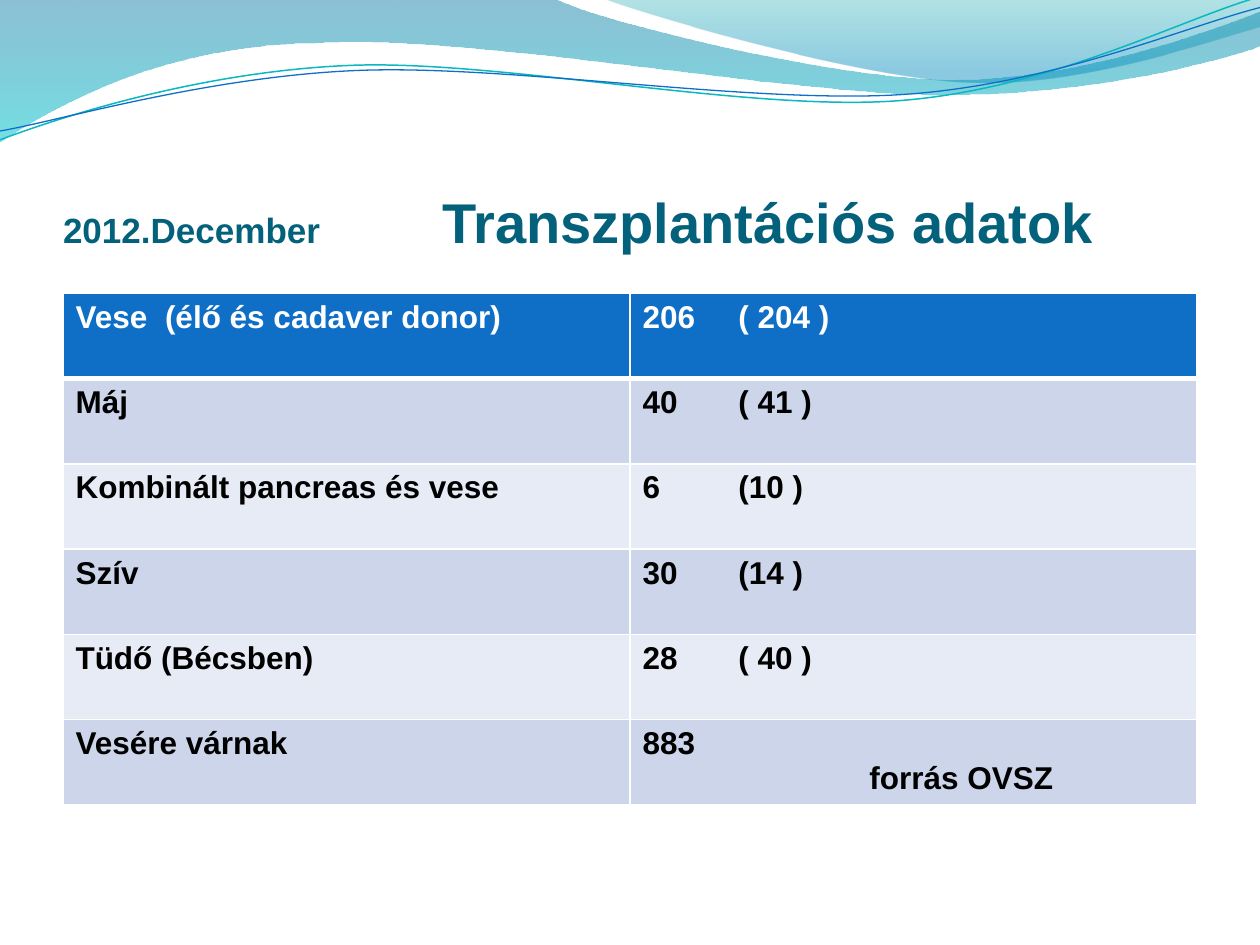
from lxml import etree
from pptx import Presentation
from pptx import util as u
from pptx.dml.color import RGBColor
from pptx.enum import text
from pptx.oxml import ns

TEAL = RGBColor(0x04, 0x61, 0x7B)
BLUE = RGBColor(0x0F, 0x6F, 0xC6)
AQUA = RGBColor(0x0A, 0xB8, 0xBF)
WHITE = RGBColor(0xFF, 0xFF, 0xFF)
BLACK = RGBColor(0, 0, 0)
DARK = RGBColor(0xCC, 0xD5, 0xEA)
LIGHT = RGBColor(0xE7, 0xEB, 0xF5)

# Each outline is a start point, then lines (2 numbers) or Bézier curves (6 numbers).
BANDS = [
    ([(0, -0.01), (4.4, -0.01), (4.76, 0.17, 6.64, 0.63, 7.58, 0.63),
      (8.53, 0.63, 9.58, 0.26, 10, 0.09), (10.01, 0.36),
      (9.83, 0.44, 8.7, 0.76, 7.46, 0.75), (6.22, 0.75, 3.82, 0.28, 2.57, 0.34),
      (1.29, 0.35, 0.46, 0.83, -0.01, 1.13), (0, -0.01)],
     [(0, RGBColor(0, 0x74, 0xA1), 45), (1, RGBColor(0, 0xC6, 0xCF), 55)]),
    ([(4.79, -0.01), (5.09, 0.11, 6.82, 0.62, 7.69, 0.65),
      (8.56, 0.69, 9.61, 0.32, 10, 0.21), (10, 0), (4.79, -0.01)],
     [(0, RGBColor(0, 0xA1, 0xA9), 30), (0.8, RGBColor(0, 0x8B, 0xBF), 45)]),
]
WAVES = [
    ([(0, 1.11), (0.48, 0.93, 1.58, 0.57, 2.77, 0.52),
      (3.95, 0.47, 5.93, 0.89, 7.13, 0.8), (8.33, 0.71, 9.38, 0.15, 9.98, -0.02)],
     AQUA, 0.85),
    ([(0, 1.04), (0.47, 0.96, 1.64, 0.61, 2.83, 0.56),
      (4.03, 0.51, 5.97, 0.83, 7.17, 0.75), (8.36, 0.67, 9.41, 0.21, 10, 0.06)],
     BLUE, 0.75),
]
ROWS = [
    ("Vese\t(élő és cadaver donor)", "206\t( 204 )"),
    ("Máj", "40\t( 41 )"),
    ("Kombinált pancreas és vese", "6\t(10 )"),
    ("Szív", "30\t(14 )"),
    ("Tüdő (Bécsben)", "28\t( 40 )"),
    ("Vesére várnak", "883"),
]
TABS = (0.71, 0.76)


def add(host, tag, **attrs):
    return etree.SubElement(host, ns.qn(tag), {k: str(v) for k, v in attrs.items()})


def put(item, **vals):
    for name, val in vals.items():
        setattr(item, name, val)


def bend(shape, outline):
    """Merge the three line segments of each curve into one Bézier segment."""
    lines = shape.element.iter(ns.qn("a:lnTo"))
    lines = iter(list(lines))
    for seg in outline[1:]:
        first = next(lines)
        if len(seg) == 6:
            first.tag = ns.qn("a:cubicBezTo")
            for _ in range(2):
                extra = next(lines)
                first.append(extra[0])
                extra.getparent().remove(extra)


class Deck:
    base = {"name": "Arial", "bold": True}

    def __init__(self):
        self.prs = Presentation()
        put(self.prs, slide_width=u.Inches(10), slide_height=u.Inches(7.5))
        self.slide = self.prs.slides.add_slide(self.prs.slide_layouts[5])

    def style(self, font, size, color):
        put(font, size=u.Pt(size), **self.base)
        font.color.rgb = color

    def tab(self, para, pos):
        stops = add(para._p.get_or_add_pPr(), "a:tabLst")
        add(stops, "a:tab", pos=u.Inches(pos), algn="l")

    def form(self, outline):
        pts = [(u.Inches(x), u.Inches(y)) for seg in outline
               for x, y in zip(seg[::2], seg[1::2])]
        pen = self.slide.shapes.build_freeform(*pts[0])
        pen.add_line_segments(pts[1:], close=pts[0] == pts[-1])
        shape = pen.convert_to_shape()
        bend(shape, outline)
        shape.shadow.inherit = False
        return shape

    def band(self, outline, stops):
        shape = self.form(outline)
        shape.line.fill.background()
        shape.fill.gradient()
        shape.fill.gradient_angle = 270
        for stop, (pos, color, _) in zip(shape.fill.gradient_stops, stops):
            stop.position = pos
            stop.color.rgb = color
        marks = shape.element.iter(ns.qn("a:srgbClr"))
        for mark, (_, _, alpha) in zip(marks, stops):
            add(mark, "a:alpha", val=alpha * 1000)

    def wave(self, outline, color, width):
        shape = self.form(outline)
        shape.fill.background()
        shape.line.color.rgb = color
        shape.line.width = u.Pt(width)

    def title(self, date, topic):
        box = self.slide.shapes.title
        put(box, left=u.Inches(0.5), top=u.Inches(0.77),
            width=u.Inches(9), height=u.Inches(1.25))
        frame = box.text_frame
        put(frame, margin_left=0, margin_right=0, margin_top=u.Inches(0.05),
            margin_bottom=0, word_wrap=True, auto_size=text.MSO_AUTO_SIZE.NONE,
            vertical_anchor=text.MSO_ANCHOR.BOTTOM)
        para = frame.paragraphs[0]
        para.alignment = text.PP_ALIGN.LEFT
        self.tab(para, 3.01)
        for words, size in ((date, 20), ("\t" + topic, 32)):
            run = para.add_run()
            run.text = words
            self.style(run.font, size, TEAL)
        box.element.getparent().append(box.element)  # in front of the waves

    def edge(self, cell, row):
        props = cell._tc.get_or_add_tcPr()
        thick = {"T": 3 if row == 1 else 1, "B": 3 if row == 0 else 1}
        for side in "LRTB":
            line = add(props, "a:ln" + side, w=u.Pt(thick.get(side, 1)))
            add(add(line, "a:solidFill"), "a:srgbClr", val=WHITE)

    def table(self, rows, source):
        grid = self.slide.shapes.add_table(
            len(rows), 2, u.Inches(0.5), u.Inches(2.33),
            u.Inches(9), u.Inches(4.06)).table
        for r, row in enumerate(rows):
            fill = BLUE if r == 0 else (DARK if r % 2 else LIGHT)
            color = BLACK if r else WHITE
            for c, words in enumerate(row):
                cell = grid.cell(r, c)
                self.edge(cell, r)
                cell.fill.solid()
                cell.fill.fore_color.rgb = fill
                para = cell.text_frame.paragraphs[0]
                if "\t" in words:
                    self.tab(para, TABS[c])
                run = para.add_run()
                run.text = words
                self.style(run.font, 18, color)
        note = grid.cell(len(rows) - 1, 1).text_frame.add_paragraph()
        note._p.get_or_add_pPr().set("marL", str(u.Inches(1.8)))
        run = note.add_run()
        run.text = source
        self.style(run.font, 18, BLACK)


def main():
    deck = Deck()
    for band in BANDS:
        deck.band(*band)
    for wave in WAVES:
        deck.wave(*wave)
    deck.title("2012.December", "Transzplantációs adatok")
    deck.table(ROWS, "forrás OVSZ")
    deck.prs.save("out.pptx")


if __name__ == "__main__":
    main()
